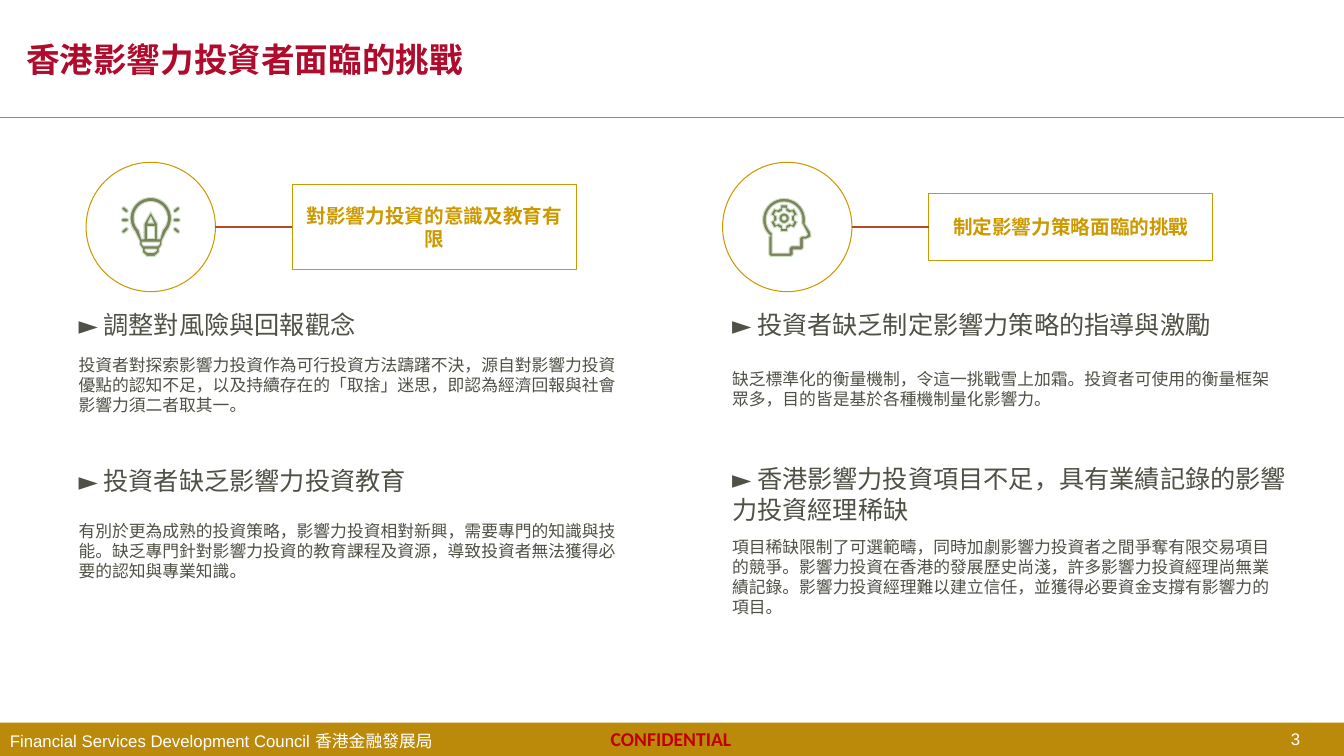
import math
import pptx
import pptx.util
import pptx.dml.color
import pptx.enum.text
import pptx.enum.shapes
import pptx.oxml.ns
import lxml.etree
from dataclasses import dataclass

Cm = pptx.util.Cm
Kind = pptx.enum.shapes.MSO_SHAPE
Align = pptx.enum.text.PP_ALIGN


@dataclass(frozen=True)
class Theme:
    gold: str = "CC9900"
    band: str = "BB8A0A"
    red: str = "B00B2D"
    alert: str = "C00000"
    rust: str = "B64926"
    ink: str = "505046"
    olive: str = "7B815C"
    pale: str = "CDDFC1"
    white: str = "FFFFFF"
    cjk: str = "Noto Sans CJK TC"
    title: int = 24
    head: int = 18
    label: int = 14
    body: int = 12
    rule: float = 0.75


def color(code):
    return pptx.dml.color.RGBColor.from_string(code)


def arc(x, y, size, start, end, steps=24):
    turns = [math.radians(start + (end - start) * i / steps) for i in range(steps + 1)]
    return [(x + size * math.cos(t), y + size * math.sin(t)) for t in turns]


def mirror(half):
    return half + [(-x, y) for x, y in reversed(half)]


def gear(x, y, root, tip, wide, slim):
    points = []
    for turn in range(30, 390, 60):
        for size, step in ((root, -wide), (tip, -slim), (tip, slim), (root, wide)):
            points += arc(x, y, size, turn + step, turn + step, 1)[:1]
    return points


class Deck:
    def __init__(self, theme):
        self.theme = theme
        self.show = pptx.Presentation()
        self.show.slide_width, self.show.slide_height = Cm(33.87), Cm(19.05)
        self.slide = self.show.slides.add_slide(self.show.slide_layouts[6])
        self.shapes = self.slide.shapes

    def paint(self, shape, fill=None, line=None):
        shape.shadow.inherit = False
        if fill:
            shape.fill.solid()
            shape.fill.fore_color.rgb = color(fill)
        else:
            shape.fill.background()
        if line:
            shape.line.color.rgb = color(line)
            shape.line.width = pptx.util.Pt(self.theme.rule)
        else:
            shape.line.fill.background()
        return shape

    def letter(self, shape, text, size, tint, font, bold=False):
        para = shape.text_frame.paragraphs[0]
        para.text = text
        run = para.runs[0]
        run.font.size = pptx.util.Pt(size)
        run.font.bold = bold
        run.font.name = font
        run.font.color.rgb = color(tint)
        props = run.font._element
        east = lxml.etree.SubElement(props, pptx.oxml.ns.qn("a:ea"))
        east.set("typeface", self.theme.cjk)
        return para

    def text(self, x, y, w, h, text, size, tint, font=None, bold=False, wrap=True, bare=False):
        box = self.shapes.add_textbox(Cm(x), Cm(y), Cm(w), Cm(h))
        frame = box.text_frame
        frame.word_wrap = wrap
        if bare:
            frame.margin_left = frame.margin_right = 0
            frame.margin_top = frame.margin_bottom = 0
        return self.letter(box, text, size, tint, font or self.theme.cjk, bold)

    def shape(self, kind, x, y, w, h, fill=None, line=None):
        item = self.shapes.add_shape(kind, Cm(x), Cm(y), Cm(w), Cm(h))
        return self.paint(item, fill, line)

    def label(self, x, y, w, h, text):
        box = self.shape(Kind.RECTANGLE, x, y, w, h, line=self.theme.gold)
        box.text_frame.word_wrap = True
        box.text_frame.vertical_anchor = pptx.enum.text.MSO_ANCHOR.MIDDLE
        para = self.letter(box, text, self.theme.label, self.theme.gold, self.theme.cjk, True)
        para.alignment = Align.CENTER
        return box

    def line(self, x, y, end, tint, goal=None):
        link = self.shapes.add_connector(
            pptx.enum.shapes.MSO_CONNECTOR.STRAIGHT, Cm(x), Cm(y), Cm(end), Cm(y))
        if goal is not None:
            link.end_connect(goal, 1)
        link.line.color.rgb = color(tint)
        link.line.width = pptx.util.Pt(self.theme.rule)
        lxml.etree.SubElement(link._element.spPr, pptx.oxml.ns.qn("a:effectLst"))

    def icon(self, x, y, loops):
        pen = None
        for loop in loops:
            first, *rest = [(Cm(x + a), Cm(y + b)) for a, b in loop]
            if pen is None:
                pen = self.shapes.build_freeform(*first)
            else:
                pen.move_to(*first)
            pen.add_line_segments(rest, close=True)
        self.paint(pen.convert_to_shape(), self.theme.olive, self.theme.pale)

    def bulb(self, x, y):
        self.icon(x, y, [
            mirror(arc(0, -0.22, 0.52, -90, 40) + [
                (0.28, 0.36), (0.28, 0.45), (0.21, 0.56), (0.21, 0.64), (0.1, 0.74)]),
            mirror(arc(0, -0.22, 0.42, -90, 45) + [
                (0.23, 0.3), (0.17, 0.3), (0.17, -0.08), (0, -0.38)]),
            mirror([(0, -0.25), (0.07, -0.1)]),
            mirror([(0.09, -0.02), (0.09, 0.3)]),
            mirror([(0.22, 0.38), (0.22, 0.43), (0.17, 0.48)]),
            mirror([(0.14, 0.56), (0.14, 0.6), (0.08, 0.64)])])
        for side in (-1, 1):
            for tilt in (-1, 0, 1):
                ray = self.shape(
                    Kind.ROUNDED_RECTANGLE, x + side * 0.65 - 0.09,
                    y - 0.22 + tilt * 0.26, 0.18, 0.09, self.theme.olive, self.theme.pale)
                ray.adjustments[0] = 0.5
                ray.rotation = side * tilt * 40

    def head(self, x, y):
        self.icon(x, y, [
            arc(-0.08, -0.18, 0.54, 130, 370) + [
                (0.59, 0.13), (0.6, 0.25), (0.5, 0.3), (0.41, 0.31), (0.41, 0.53),
                (0.36, 0.58), (0.15, 0.58), (0.15, 0.7), (0.1, 0.74), (-0.42, 0.74),
                (-0.46, 0.7), (-0.46, 0.23)],
            arc(-0.08, -0.18, 0.45, 130, 370) + [
                (0.51, 0.18), (0.47, 0.23), (0.36, 0.23), (0.31, 0.28), (0.31, 0.48),
                (0.1, 0.48), (0.05, 0.53), (0.05, 0.66), (-0.38, 0.66), (-0.38, 0.2)]])
        hub = (-0.08, -0.22)
        self.icon(x, y, [
            gear(*hub, 0.27, 0.35, 20, 14), gear(*hub, 0.19, 0.26, 14, 9),
            arc(*hub, 0.13, 0, 360), arc(*hub, 0.05, 0, 360)])


def main():
    theme = Theme()
    deck = Deck(theme)
    deck.shape(Kind.RECTANGLE, 0, 18.21, 33.87, 0.84, theme.band)
    page = deck.text(32.53, 18.29, 1, 0.56, "3", theme.body, theme.white, "Arial", bare=True)
    page.line_spacing = pptx.util.Pt(16.5)
    deck.text(0, 18.29, 16.48, 0.76, "Financial Services Development Council 香港金融發展局",
              theme.body, theme.white, "Arial")
    deck.text(15.14, 18.19, 3.58, 0.86, "CONFIDENTIAL", theme.label, theme.alert,
              "Calibri", True, False)
    deck.line(0, 2.97, 33.87, theme.band)
    deck.text(0.66, 0.99, 30.94, 1.02, "香港影響力投資者面臨的挑戰",
              theme.title, theme.red, bold=True, bare=True)

    mid, size = 5.72, 3.26
    columns = [
        (2.17, 1.73, 2.16, deck.bulb, "對影響力投資的意識及教育有限", [
            (7.67, 14.05, "► 調整對風險與回報觀念", 8.81,
             "投資者對探索影響力投資作為可行投資方法躊躇不決，源自對影響力投資優點的認知不足，以及持續存在的「取捨」迷思，即認為經濟回報與社會影響力須二者取其一。"),
            (11.61, 14.05, "► 投資者缺乏影響力投資教育", 13,
             "有別於更為成熟的投資策略，影響力投資相對新興，需要專門的知識與技能。缺乏專門針對影響力投資的教育課程及資源，導致投資者無法獲得必要的認知與專業知識。")]),
        (18.21, 18.2, 1.68, deck.head, "制定影響力策略面臨的挑戰", [
            (7.67, 14.05, "► 投資者缺乏制定影響力策略的指導與激勵", 9.17,
             "缺乏標準化的衡量機制，令這一挑戰雪上加霜。投資者可使用的衡量框架眾多，目的皆是基於各種機制量化影響力。"),
            (11.56, 14.48, "► 香港影響力投資項目不足，具有業績記錄的影響力投資經理稀缺", 13.39,
             "項目稀缺限制了可選範疇，同時加劇影響力投資者之間爭奪有限交易項目的競爭。影響力投資在香港的發展歷史尚淺，許多影響力投資經理尚無業績記錄。影響力投資經理難以建立信任，並獲得必要資金支撐有影響力的項目。")])]
    for left, edge, tall, draw, name, points in columns:
        deck.shape(Kind.OVAL, left, mid - size / 2, size, size, line=theme.gold)
        box = deck.label(left + 5.2, mid - tall / 2, 7.16, tall, name)
        deck.line(left + size, mid, left + 5.2, theme.rust, box)
        draw(left + size / 2, mid)
        for top, wide, head, low, body in points:
            deck.text(edge, top, wide, 1.02, head, theme.head, theme.ink)
            deck.text(edge, low, 14.05, 1.02, body, theme.body, theme.ink)
    deck.show.save("out.pptx")


if __name__ == "__main__":
    main()
